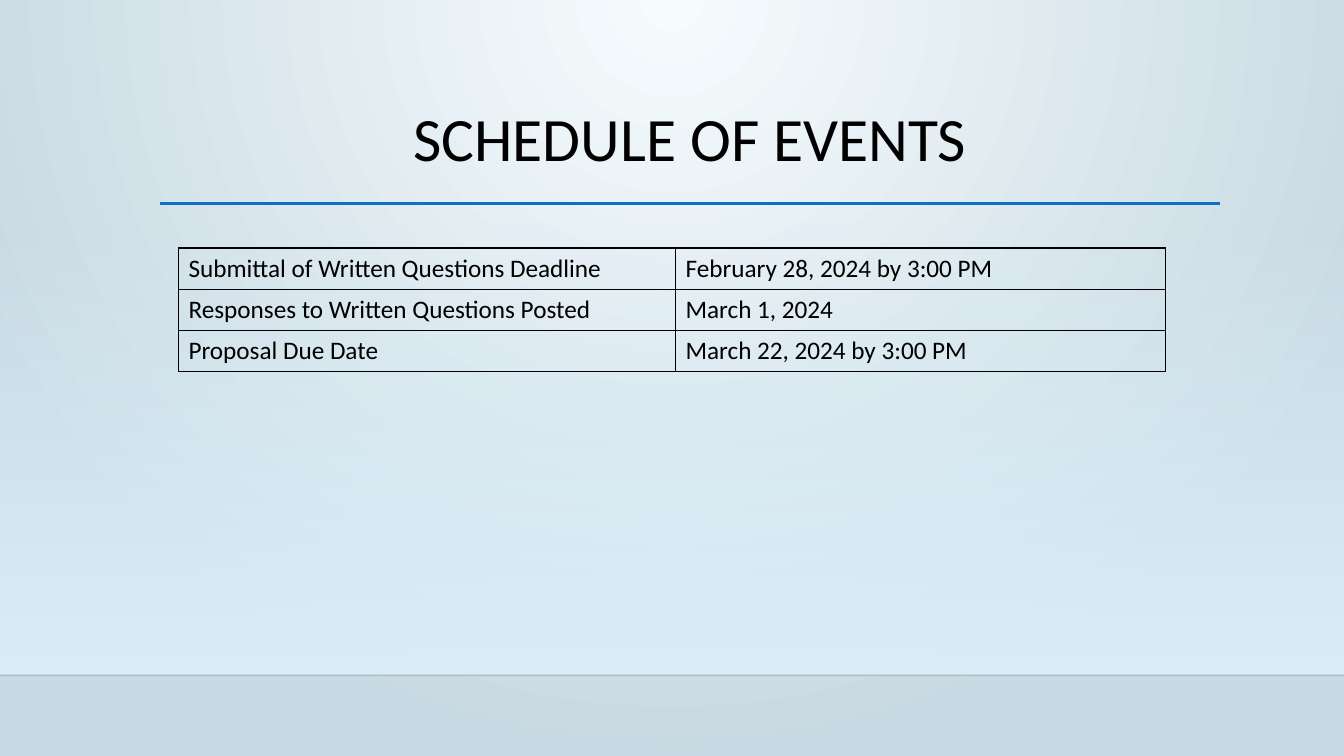
from dataclasses import dataclass

from lxml.etree import SubElement
from pptx import Presentation
from pptx.dml.color import RGBColor
from pptx.enum.shapes import MSO_CONNECTOR, MSO_SHAPE
from pptx.enum.text import MSO_ANCHOR, PP_ALIGN
from pptx.oxml import parse_xml
from pptx.oxml.ns import nsdecls, qn
from pptx.util import Inches, Pt

TITLE = "SCHEDULE OF EVENTS"
EVENTS = [
    ("Submittal of Written Questions Deadline", "February 28, 2024 by 3:00 PM"),
    ("Responses to Written Questions Posted", "March 1, 2024"),
    ("Proposal Due Date", "March 22, 2024 by 3:00 PM"),
]

WIDTH, HEIGHT = 13.33, 7.5
HORIZON = 6.7
GLOW_TOP = 2.21
RULE_LEFT, RULE_RIGHT, RULE_TOP = 1.59, 12.1, 2.02
TITLE_TOP, TITLE_HEIGHT = 1.02, 1.15
TABLE_LEFT, TABLE_TOP = 1.77, 2.46
COLUMN_WIDTHS = (4.93, 4.86)
ROW_HEIGHT = 0.41


@dataclass(frozen=True)
class Theme:
    font: str = "Calibri"
    title_size: int = 44
    body_size: int = 18
    text: str = "000000"
    accent: str = "0F6FC6"
    horizon: str = "000001"
    glow: str = "DBEFF9"
    center: str = "F6FBFD"
    edge: str = "C7D9E2"


THEME = Theme()


def gradient(stops, direction):
    """Return a gradient fill from (position, colour, opacity) stops in percent."""
    listing = "".join(
        f'<a:gs pos="{position * 1000}"><a:srgbClr val="{color}">'
        f'<a:alpha val="{opacity * 1000}"/></a:srgbClr></a:gs>'
        for position, color, opacity in stops
    )
    return parse_xml(
        f'<a:gradFill {nsdecls("a")} rotWithShape="1"><a:gsLst>{listing}</a:gsLst>{direction}</a:gradFill>'
    )


def replace_gradient(fill, parent, new_gradient):
    """Put a custom gradient in place of the fill of a parent element."""
    fill.gradient()
    old_gradient = parent.find(qn("a:gradFill"))
    parent.replace(old_gradient, new_gradient)


def style_paragraph(paragraph, size):
    """Apply the theme font to a paragraph."""
    for run in paragraph.runs:
        run.font.name = THEME.font
        run.font.size = Pt(size)
        run.font.color.rgb = RGBColor.from_string(THEME.text)


def add_background(slide):
    """Fill the slide with a glow that starts at the top centre."""
    fill = slide.background.fill
    parent = slide.element.cSld.find(qn("p:bg")).find(qn("p:bgPr"))
    circle = '<a:path path="circle"><a:fillToRect l="43000" r="43000" b="100000"/></a:path>'
    stops = [(0, THEME.center, 100), (100, THEME.edge, 100)]
    replace_gradient(fill, parent, gradient(stops, circle))


def add_glow(slide):
    """Add the band that fades in down to the horizon."""
    band = slide.shapes.add_shape(
        MSO_SHAPE.RECTANGLE, 0, Inches(GLOW_TOP), Inches(WIDTH), Inches(HORIZON - GLOW_TOP)
    )
    band.shadow.inherit = False
    band.line.fill.background()
    stops = [(0, THEME.glow, 0), (100, THEME.glow, 100)]
    downward = '<a:lin ang="5400000" scaled="0"/>'
    replace_gradient(band.fill, band.element.spPr, gradient(stops, downward))


def add_rule(slide, left, right, top, color, weight, opacity=100):
    """Add a horizontal line."""
    rule = slide.shapes.add_connector(
        MSO_CONNECTOR.STRAIGHT, Inches(left), Inches(top), Inches(right), Inches(top)
    )
    rule.line.color.rgb = RGBColor.from_string(color)
    rule.line.width = Pt(weight)
    properties = rule.element.spPr
    SubElement(properties, qn("a:effectLst"))
    if opacity < 100:
        tint = next(properties.iter(qn("a:srgbClr")))
        SubElement(tint, qn("a:alpha"), val=str(opacity * 1000))


def add_title(slide):
    """Add the centred heading."""
    box = slide.shapes.add_textbox(
        Inches(RULE_LEFT), Inches(TITLE_TOP), Inches(RULE_RIGHT - RULE_LEFT), Inches(TITLE_HEIGHT)
    )
    text_frame = box.text_frame
    text_frame.word_wrap = True
    text_frame.vertical_anchor = MSO_ANCHOR.TOP
    text_frame.text = TITLE
    paragraph = text_frame.paragraphs[0]
    paragraph.alignment = PP_ALIGN.CENTER
    paragraph.line_spacing = 0.9
    style_paragraph(paragraph, THEME.title_size)


def add_borders(cell):
    """Draw a thin line on each side of a cell."""
    properties = cell._tc.get_or_add_tcPr()
    for side in ("lnL", "lnR", "lnT", "lnB"):
        properties.append(parse_xml(
            f'<a:{side} {nsdecls("a")} w="{Pt(1)}"><a:solidFill>'
            f'<a:srgbClr val="{THEME.text}"/></a:solidFill></a:{side}>'
        ))


def add_schedule(slide):
    """Add the table of events and dates."""
    table = slide.shapes.add_table(
        len(EVENTS), len(COLUMN_WIDTHS), Inches(TABLE_LEFT), Inches(TABLE_TOP),
        Inches(sum(COLUMN_WIDTHS)), Inches(ROW_HEIGHT * len(EVENTS)),
    ).table
    table.first_row = False
    table.horz_banding = False
    for column, width in zip(table.columns, COLUMN_WIDTHS):
        column.width = Inches(width)
    for row, event in zip(table.rows, EVENTS):
        row.height = Inches(ROW_HEIGHT)
        for cell, text in zip(row.cells, event):
            cell.text_frame.text = text
            style_paragraph(cell.text_frame.paragraphs[0], THEME.body_size)
            add_borders(cell)
            cell.fill.background()


def main():
    """Build and save the slide."""
    presentation = Presentation()
    presentation.slide_width = Inches(WIDTH)
    presentation.slide_height = Inches(HEIGHT)
    slide = presentation.slides.add_slide(presentation.slide_layouts[6])
    add_background(slide)
    add_glow(slide)
    add_rule(slide, 0, WIDTH, HORIZON, THEME.horizon, 1, opacity=20)
    add_rule(slide, RULE_LEFT, RULE_RIGHT, RULE_TOP, THEME.accent, 2.5)
    add_title(slide)
    add_schedule(slide)
    presentation.save("out.pptx")


if __name__ == "__main__":
    main()
